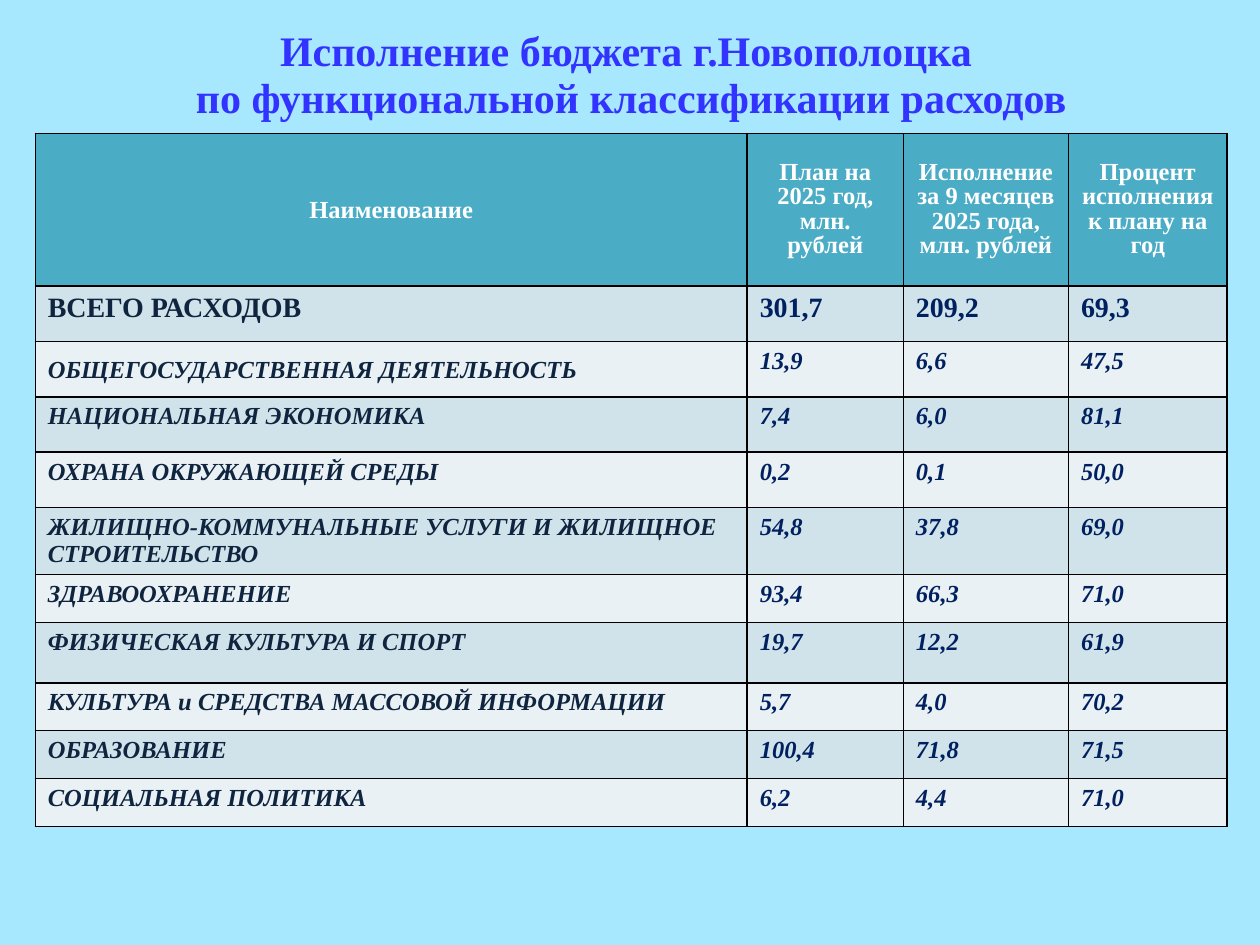
import pptx
import pptx.util
import pptx.dml.color
import pptx.enum.text
import pptx.oxml
import pptx.oxml.ns
from dataclasses import dataclass

Inches = pptx.util.Inches
Pt = pptx.util.Pt
Align = pptx.enum.text.PP_ALIGN
Anchor = pptx.enum.text.MSO_ANCHOR


@dataclass(frozen=True)
class Theme:
    font: str = "Times New Roman"
    background: str = "A7E8FF"
    title: str = "3333FF"
    header_fill: str = "4BACC6"
    header_text: str = "FFFFFF"
    bands: tuple = ("E9F1F5", "D0E3EA")
    name_text: str = "0F243E"
    value_text: str = "002060"
    border: str = "000000"
    title_size: int = 24
    total_size: int = 16
    body_size: int = 14


theme = Theme()


def format_paragraph(paragraph, size, color, italic=False):
    values = {"name": theme.font, "size": Pt(size), "bold": True, "italic": italic}
    for run in paragraph.runs:
        for attribute, value in values.items():
            setattr(run.font, attribute, value)
        run.font.color.rgb = pptx.dml.color.RGBColor.from_string(color)


def style_cell(cell, fill):
    properties = cell._tc.get_or_add_tcPr()
    for side in ("lnL", "lnR", "lnT", "lnB"):
        properties.append(pptx.oxml.parse_xml(
            f'<a:{side} {pptx.oxml.ns.nsdecls("a")} w="{Pt(1)}">'
            f'<a:solidFill><a:srgbClr val="{theme.border}"/></a:solidFill></a:{side}>'))
    cell.fill.solid()
    cell.fill.fore_color.rgb = pptx.dml.color.RGBColor.from_string(fill)


presentation = pptx.Presentation()
presentation.slide_width = Inches(10)
presentation.slide_height = Inches(7.5)
slide = presentation.slides.add_slide(presentation.slide_layouts[5])
slide.background.fill.solid()
slide.background.fill.fore_color.rgb = pptx.dml.color.RGBColor.from_string(theme.background)

title = slide.shapes.title
title_place = {"left": 0.51, "top": 0.13, "width": 9, "height": 0.93}
for attribute, value in title_place.items():
    setattr(title, attribute, Inches(value))
title.text_frame.vertical_anchor = Anchor.MIDDLE
title.text_frame.text = "Исполнение бюджета г.Новополоцка \vпо функциональной классификации расходов"
title_paragraph = title.text_frame.paragraphs[0]
title_paragraph.alignment = Align.CENTER
title_paragraph.line_spacing = Pt(27)
format_paragraph(title_paragraph, theme.title_size, theme.title)

headers = (
    "Наименование",
    "План на 2025 год, млн. рублей",
    "Исполнение за 9 месяцев 2025 года, млн. рублей",
    "Процент исполнения к плану на год",
)
expenses = (
    ("ВСЕГО РАСХОДОВ", "301,7", "209,2", "69,3"),
    ("ОБЩЕГОСУДАРСТВЕННАЯ ДЕЯТЕЛЬНОСТЬ", "13,9", "6,6", "47,5"),
    ("НАЦИОНАЛЬНАЯ ЭКОНОМИКА", "7,4", "6,0", "81,1"),
    ("ОХРАНА ОКРУЖАЮЩЕЙ СРЕДЫ", "0,2", "0,1", "50,0"),
    ("ЖИЛИЩНО-КОММУНАЛЬНЫЕ УСЛУГИ И ЖИЛИЩНОЕ СТРОИТЕЛЬСТВО", "54,8", "37,8", "69,0"),
    ("ЗДРАВООХРАНЕНИЕ", "93,4", "66,3", "71,0"),
    ("ФИЗИЧЕСКАЯ КУЛЬТУРА И СПОРТ", "19,7", "12,2", "61,9"),
    ("КУЛЬТУРА и СРЕДСТВА МАССОВОЙ ИНФОРМАЦИИ", "5,7", "4,0", "70,2"),
    ("ОБРАЗОВАНИЕ", "100,4", "71,8", "71,5"),
    ("СОЦИАЛЬНАЯ ПОЛИТИКА", "6,2", "4,4", "71,0"),
)
column_widths = (5.65, 1.24, 1.31, 1.26)
row_heights = (1.21, *[0.44] * 5, 0.38, 0.48, *[0.38] * 3)

table = slide.shapes.add_table(
    len(row_heights), len(column_widths), Inches(0.28), Inches(1.06),
    Inches(sum(column_widths)), Inches(sum(row_heights))).table
for column, width in zip(table.columns, column_widths):
    column.width = Inches(width)
for row, height in zip(table.rows, row_heights):
    row.height = Inches(height)

for column_index, header in enumerate(headers):
    cell = table.cell(0, column_index)
    cell.text = header
    cell.vertical_anchor = Anchor.MIDDLE
    style_cell(cell, theme.header_fill)
    paragraph = cell.text_frame.paragraphs[0]
    paragraph.alignment = Align.CENTER
    if column_index > 0:
        paragraph.line_spacing = Pt(14)
    format_paragraph(paragraph, theme.body_size, theme.header_text)

for row_index, expense in enumerate(expenses, start=1):
    is_total = row_index == 1
    size = theme.total_size if is_total else theme.body_size
    for column_index, text in enumerate(expense):
        cell = table.cell(row_index, column_index)
        cell.text = text
        style_cell(cell, theme.bands[row_index % 2])
        color = theme.value_text if column_index else theme.name_text
        format_paragraph(cell.text_frame.paragraphs[0], size, color, not is_total)

general_activity = table.cell(2, 0)
general_format = {
    "vertical_anchor": Anchor.MIDDLE,
    "margin_right": Inches(0.01),
    "margin_top": Inches(0.01),
    "margin_bottom": Inches(0),
}
for attribute, value in general_format.items():
    setattr(general_activity, attribute, value)

presentation.save("out.pptx")
